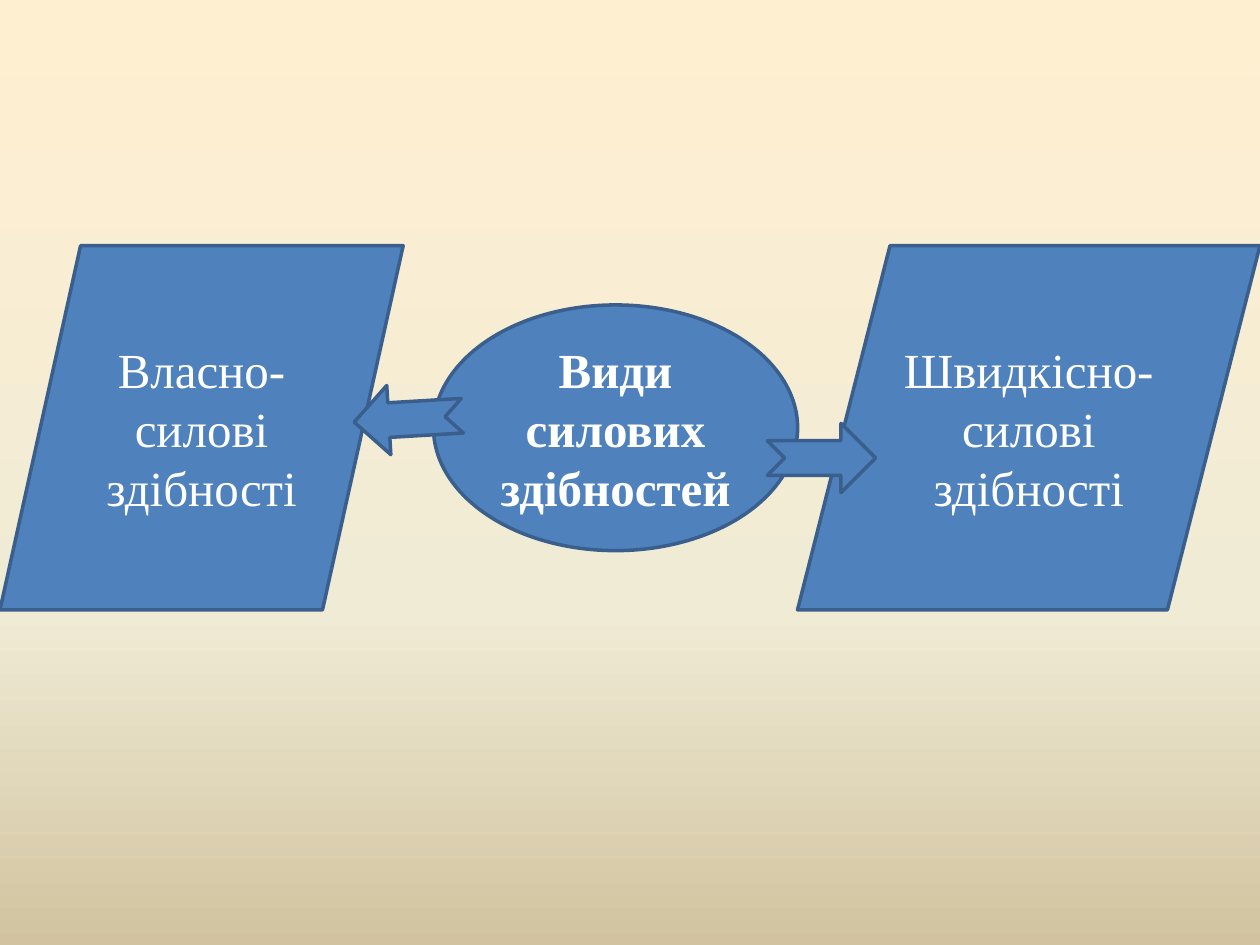
import copy
from dataclasses import dataclass

import pptx
import pptx.dml.color
import pptx.enum.shapes
import pptx.enum.text
import pptx.oxml.ns
import pptx.util

KIND = pptx.enum.shapes.MSO_SHAPE
COLS, ROWS = 100, 75
WIDE, HIGH = pptx.util.Inches(10), pptx.util.Inches(7.5)


@dataclass(frozen=True)
class Theme:
    fill: str = "4F81BD"
    edge: str = "3A5F8C"
    ink: str = "FFFFFF"
    font: str = "Times New Roman"
    size: int = 28
    line: int = 2
    back: tuple = ((0, "FFEFD1"), (0.65, "F0EBD5"), (1, "D1C39F"))


THEME = Theme()


def rgb(code):
    return pptx.dml.color.RGBColor.from_string(code)


def put(obj, **form):
    for name, value in form.items():
        setattr(obj, name, value)


def paint_back(slide):
    """Fill the background with the theme's gradient, top to bottom."""
    fill = slide.background.fill
    fill.gradient()
    fill.gradient_angle = 270
    stops = next(slide.element.iter(pptx.oxml.ns.qn("a:gsLst")))
    stops.append(copy.deepcopy(stops[-1]))
    for stop, (place, code) in zip(fill.gradient_stops, THEME.back):
        stop.position = place
        stop.color.rgb = rgb(code)


def add_shape(slide, kind, col, row, cols, rows, turn=0):
    """Draw a preset shape placed in grid columns and rows."""
    shape = slide.shapes.add_shape(
        kind,
        round(WIDE * col / COLS),
        round(HIGH * row / ROWS),
        round(WIDE * cols / COLS),
        round(HIGH * rows / ROWS),
    )
    shape.rotation = turn
    shape.shadow.inherit = False
    shape.fill.solid()
    shape.fill.fore_color.rgb = rgb(THEME.fill)
    shape.line.color.rgb = rgb(THEME.edge)
    shape.line.width = pptx.util.Pt(THEME.line)
    return shape


def add_label(shape, text, bold=False):
    frame = shape.text_frame
    put(frame, word_wrap=True, vertical_anchor=pptx.enum.text.MSO_ANCHOR.MIDDLE)
    para = frame.paragraphs[0]
    para.alignment = pptx.enum.text.PP_ALIGN.CENTER
    run = para.add_run()
    run.text = text
    put(run.font, name=THEME.font, size=pptx.util.Pt(THEME.size), bold=bold)
    run.font.color.rgb = rgb(THEME.ink)


def add_arrow(slide, col, row, turn=0):
    add_shape(slide, KIND.NOTCHED_RIGHT_ARROW, col, row, 8.6, 5.5, turn)


def add_branch(slide, col, cols, text):
    add_label(add_shape(slide, KIND.FLOWCHART_DATA, col, 19.5, cols, 28.9), text)


def main():
    deck = pptx.Presentation()
    put(deck, slide_width=WIDE, slide_height=HIGH)
    slide = deck.slides.add_slide(deck.slide_layouts[6])
    paint_back(slide)

    topic = add_shape(slide, KIND.OVAL, 34.4, 24.2, 28.9, 19.5)
    add_label(topic, "Види силових здібностей", bold=True)
    add_branch(slide, 0, 32, "Власно-силові здібності")
    add_branch(slide, 63.3, 36.7, "Швидкісно-силові здібності")
    add_arrow(slide, 60.9, 33.6)
    add_arrow(slide, 28.1, 30.5, turn=176.6)

    deck.save("out.pptx")


if __name__ == "__main__":
    main()
